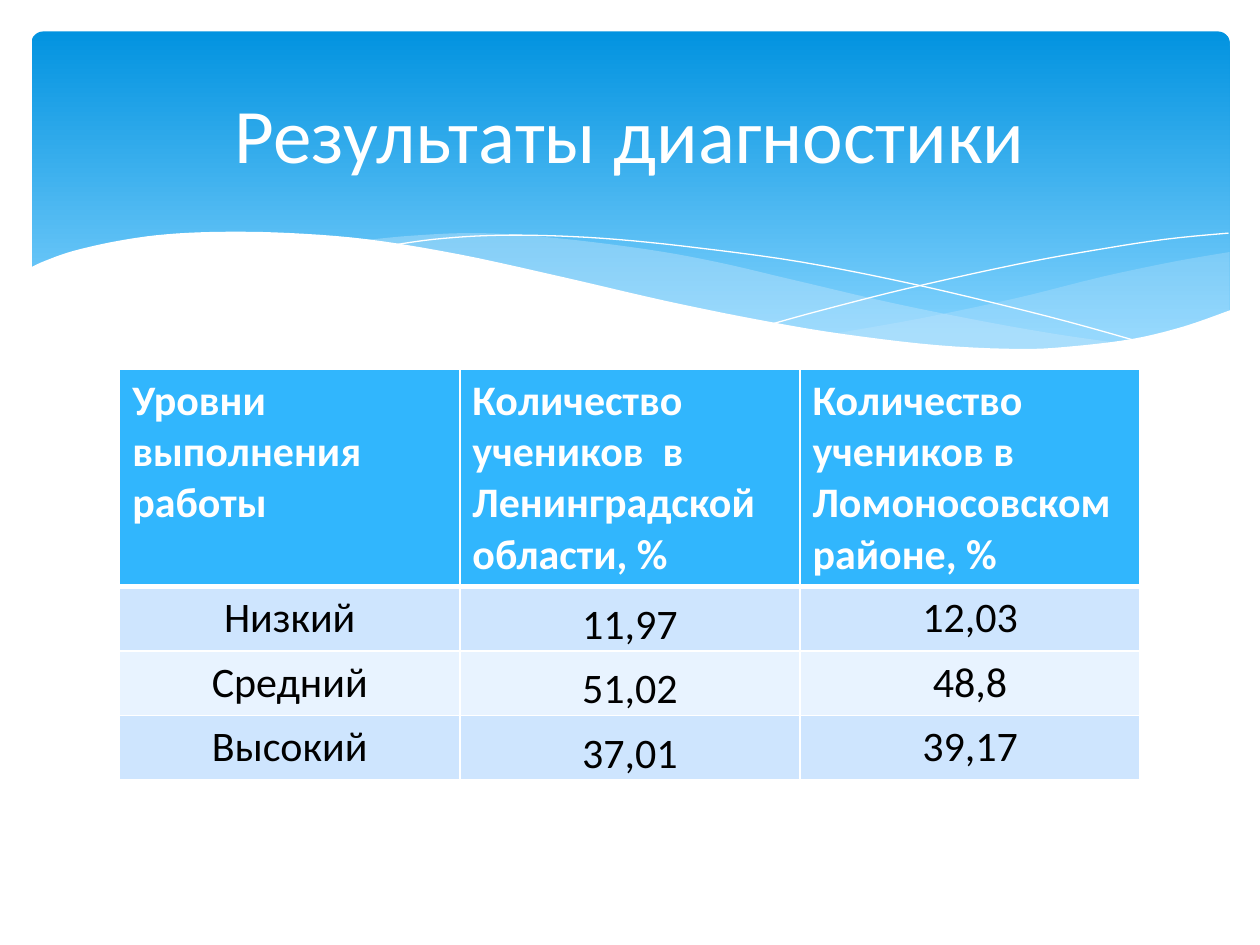
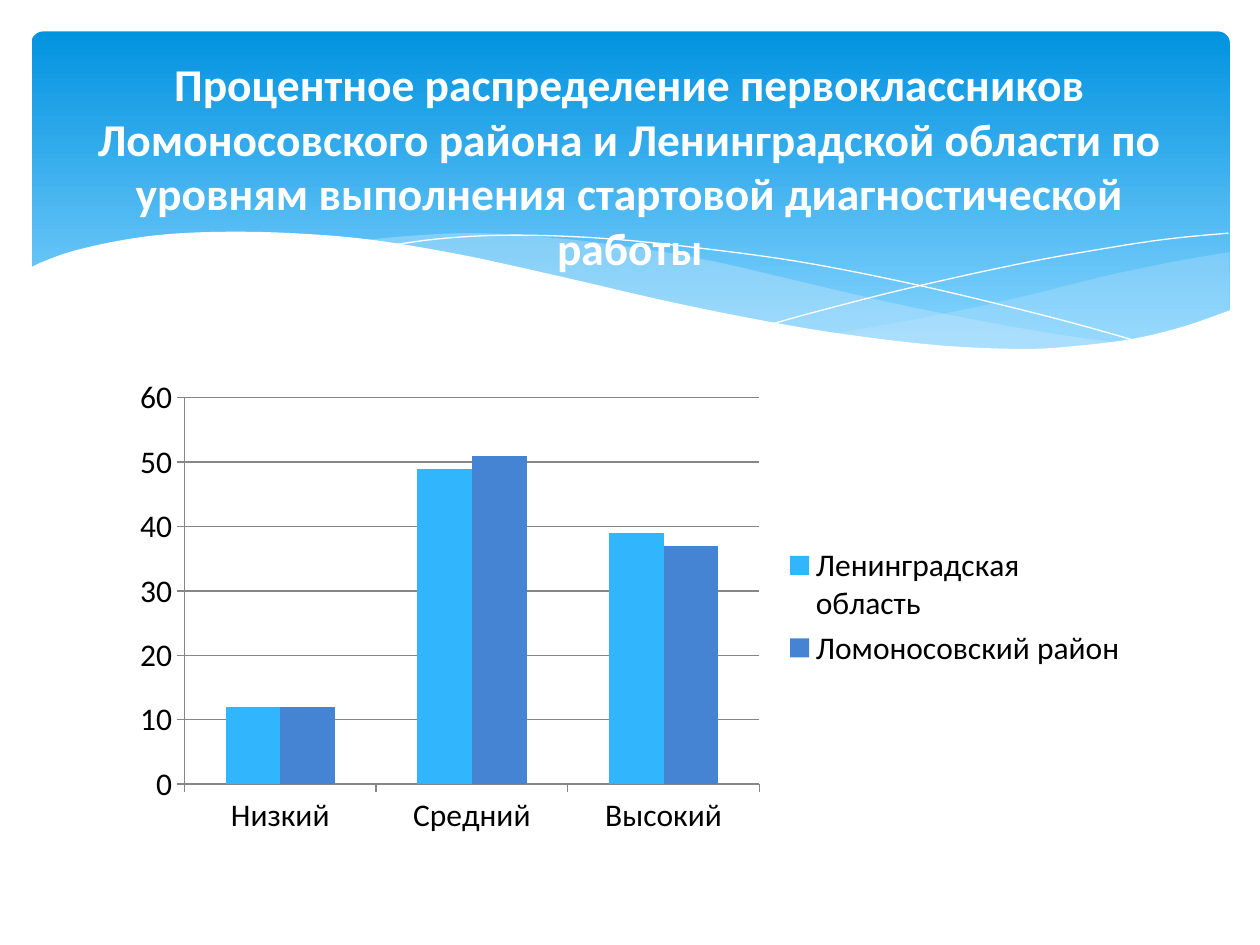
from lxml import etree
from pptx import Presentation
from pptx.chart.data import CategoryChartData
from pptx.dml.color import RGBColor
from pptx.enum.chart import XL_CHART_TYPE, XL_LEGEND_POSITION, XL_TICK_MARK
from pptx.enum.shapes import MSO_SHAPE
from pptx.enum.text import MSO_ANCHOR, PP_ALIGN
from pptx.oxml.ns import qn
from pptx.util import Inches, Pt

ROUND_RECT = MSO_SHAPE.ROUNDED_RECTANGLE
CENTER = PP_ALIGN.CENTER
MIDDLE, BOTTOM = MSO_ANCHOR.MIDDLE, MSO_ANCHOR.BOTTOM
COLUMNS = XL_CHART_TYPE.COLUMN_CLUSTERED
LEGEND_RIGHT = XL_LEGEND_POSITION.RIGHT
TICK_OUT = XL_TICK_MARK.OUTSIDE

WHITE = RGBColor(0xFF, 0xFF, 0xFF)
BLACK = RGBColor(0x00, 0x00, 0x00)
BAND_TOP = RGBColor(0x02, 0x93, 0xE0)
BAND_BOTTOM = RGBColor(0x83, 0xD3, 0xFE)
WAVE = RGBColor(0xC6, 0xE7, 0xFC)
SKY = RGBColor(0x31, 0xB6, 0xFD)
BLUE = RGBColor(0x45, 0x84, 0xD3)
ROW_DARK = RGBColor(0xCE, 0xE5, 0xFE)
ROW_LIGHT = RGBColor(0xE8, 0xF3, 0xFF)
AXIS_GRAY = RGBColor(0x86, 0x86, 0x86)
FONT = "Calibri"

BAND_BOX = (0.25, 0.25, 9.51, 2.7)
TABLE_BOX = (0.95, 2.93, 8.1, 3.25)
CHART_BOX = (0.95, 2.93, 8.1, 3.77)

RIGHT_WAVE = [
    [(9.51, 1.75), (9.1, 1.82), (8.66, 1.91), (8.36, 1.98), (7.8, 2.12),
     (7.04, 2.28), (6.36, 2.4)],
    [(6.36, 2.4), (6.8, 2.46), (7.32, 2.51), (7.78, 2.53), (8.29, 2.51),
     (8.72, 2.45), (9.1, 2.37), (9.51, 2.22)],
]
MIDDLE_WAVE = [
    [(2.61, 1.66), (3.03, 1.62), (3.55, 1.6), (4.17, 1.64), (4.89, 1.73),
     (5.44, 1.83), (6.04, 1.97), (6.81, 2.15), (7.5, 2.29), (8.12, 2.4),
     (8.68, 2.48)],
    [(8.68, 2.48), (8.23, 2.52), (7.82, 2.53), (7.23, 2.51), (6.55, 2.43),
     (5.93, 2.33), (5.05, 2.15), (4.24, 1.97), (3.58, 1.82), (2.98, 1.71),
     (2.61, 1.66)],
]
FALLING_LINE = [
    [(2.84, 1.7), (3.19, 1.65), (3.62, 1.62), (4.08, 1.62), (4.64, 1.65),
     (5.31, 1.72), (6.11, 1.83), (7.02, 2.01), (8.06, 2.26), (8.82, 2.47)],
]
RISING_LINE = [
    [(5.88, 2.32), (6.28, 2.21), (6.95, 2.04), (7.81, 1.85), (8.41, 1.74),
     (8.99, 1.65), (9.5, 1.6)],
]
WHITE_WAVE = [
    [(9.52, 2.21), (9.15, 2.34), (8.74, 2.44), (8.25, 2.5), (7.84, 2.52),
     (7.19, 2.49), (6.43, 2.4), (5.78, 2.29), (5.04, 2.14), (4.22, 1.95),
     (3.4, 1.77), (2.67, 1.65), (2.05, 1.6), (1.52, 1.59), (1.07, 1.61),
     (0.7, 1.66), (0.34, 1.74), (0.11, 1.82), (-0.02, 1.88)],
    [(-0.02, 3.04), (9.52, 3.04)],
]

LEVELS = ["Низкий", "Средний", "Высокий"]
HEADERS = [
    "Уровни выполнения работы",
    "Количество учеников  в Ленинградской области, %",
    "Количество учеников в Ломоносовском районе, %",
]
REGION_SHARES = ["11,97", "51,02", "37,01"]
DISTRICT_SHARES = ["12,03", "48,8", "39,17"]
CHART_SERIES = [
    ("Ленинградская область", (12, 49, 39), SKY),
    ("Ломоносовский район", (12, 51, 37), BLUE),
]


def smooth(points, steps=5):
    """Return a Catmull-Rom curve through the points."""
    padded = [points[0], *points, points[-1]]
    curve = [points[0]]
    for a, b, c, d in zip(padded, padded[1:], padded[2:], padded[3:]):
        for step in range(1, steps + 1):
            t = step / steps
            curve.append(tuple(
                (2 * q + (r - p) * t + (2 * p - 5 * q + 4 * r - s) * t ** 2
                 + (3 * q - p - 3 * r + s) * t ** 3) / 2
                for p, q, r, s in zip(a, b, c, d)))
    return curve


def add_curve(slide, box, curves, fill=None, alpha=100):
    """Draw a filled wave, or a hairline when no fill is given."""
    left, top = box[:2]
    points = [(Inches(left + x), Inches(top + y))
              for curve in curves for x, y in smooth(curve)]
    builder = slide.shapes.build_freeform(*points[0])
    builder.add_line_segments(points[1:], close=fill is not None)
    sp = builder.convert_to_shape()
    sp.shadow.inherit = False
    if fill is None:
        sp.fill.background()
        sp.line.color.rgb = WHITE
        sp.line.width = 0
        return
    sp.fill.solid()
    sp.fill.fore_color.rgb = fill
    sp.line.fill.background()
    if alpha < 100:
        color = sp.fill._xPr.find(".//" + qn("a:srgbClr"))
        etree.SubElement(color, qn("a:alpha"), val=str(alpha * 1000))


def add_band(slide, box):
    """Draw the gradient band with its waves."""
    sp = slide.shapes.add_shape(ROUND_RECT, *map(Inches, box))
    sp.adjustments[0] = 0.034
    sp.shadow.inherit = False
    sp.line.fill.background()
    sp.fill.gradient()
    sp.fill.gradient_angle = 270
    stops = zip(sp.fill.gradient_stops, (0, 0.9), (BAND_TOP, BAND_BOTTOM))
    for stop, position, color in stops:
        stop.position = position
        stop.color.rgb = color
    add_curve(slide, box, RIGHT_WAVE, WAVE, 29)
    add_curve(slide, box, MIDDLE_WAVE, WAVE, 40)
    add_curve(slide, box, FALLING_LINE)
    add_curve(slide, box, RISING_LINE)
    add_curve(slide, box, WHITE_WAVE, WHITE)


def format_text(p, size, color, bold=False):
    """Format every run of a paragraph."""
    for r in p.runs:
        r.font.name = FONT
        r.font.size = Pt(size)
        r.font.bold = bold
        r.font.color.rgb = color


def add_title(slide, box, text, size, bold=False):
    """Write the centred white title."""
    tf = slide.shapes.add_textbox(*map(Inches, box)).text_frame
    tf.word_wrap = True
    tf.vertical_anchor = MIDDLE
    tf.text = text
    p = tf.paragraphs[0]
    p.alignment = CENTER
    format_text(p, size, WHITE, bold)


def set_borders(cell, top, bottom):
    """Give a cell white borders, with top and bottom widths in points."""
    tc_pr = cell._tc.get_or_add_tcPr()
    sides = (("L", 1), ("R", 1), ("T", top), ("B", bottom))
    for i, (side, width) in enumerate(sides):
        ln = etree.Element(qn("a:ln" + side), w=str(Pt(width)))
        solid = etree.SubElement(ln, qn("a:solidFill"))
        etree.SubElement(solid, qn("a:srgbClr"), val=str(WHITE))
        tc_pr.insert(i, ln)


def add_results_table(slide, box):
    """Fill the table of results by level."""
    rows = [HEADERS, *zip(LEVELS, REGION_SHARES, DISTRICT_SHARES)]
    table = slide.shapes.add_table(
        len(rows), len(HEADERS), *map(Inches, box)).table
    table.horz_banding = False
    for column in table.columns:
        column.width = Inches(box[2] / len(HEADERS))
    header_height = 1.72
    for i, values in enumerate(rows):
        header = i == 0
        body_height = (box[3] - header_height) / len(LEVELS)
        table.rows[i].height = Inches(header_height if header else body_height)
        for j, value in enumerate(values):
            cell = table.cell(i, j)
            cell.text = value
            p = cell.text_frame.paragraphs[0]
            format_text(p, 24, WHITE if header else BLACK, header)
            cell.fill.solid()
            cell.fill.fore_color.rgb = (
                SKY if header else ROW_DARK if i % 2 else ROW_LIGHT)
            set_borders(cell, 3 if i == 1 else 1, 3 if header else 1)
            if not header:
                p.alignment = CENTER
                if j == 1:
                    p.line_spacing = 1.15
                    cell.vertical_anchor = BOTTOM
                    cell.margin_left = cell.margin_right = Inches(0.07)
                    cell.margin_top = cell.margin_bottom = 0


def add_levels_chart(slide, box):
    """Draw the column chart that compares region and district."""
    data = CategoryChartData()
    data.categories = LEVELS
    for name, values, _ in CHART_SERIES:
        data.add_series(name, values)
    chart = slide.shapes.add_chart(COLUMNS, *map(Inches, box), data).chart
    chart.has_title = False
    chart.font.name = FONT
    chart.font.size = Pt(18)
    chart.font.color.rgb = BLACK
    chart.has_legend = True
    chart.legend.position = LEGEND_RIGHT
    chart.legend.include_in_layout = False
    plot = chart.plots[0]
    plot.gap_width = 150
    plot.vary_by_categories = False
    for series, (_, _, color) in zip(plot.series, CHART_SERIES):
        series.format.fill.solid()
        series.format.fill.fore_color.rgb = color
    for axis in (chart.category_axis, chart.value_axis):
        axis.major_tick_mark = TICK_OUT
        axis.format.line.color.rgb = AXIS_GRAY
    chart.value_axis.has_major_gridlines = True
    chart.value_axis.major_gridlines.format.line.color.rgb = AXIS_GRAY


def new_slide(prs):
    """Add a blank slide with the shared band."""
    slide = prs.slides.add_slide(prs.slide_layouts[6])
    add_band(slide, BAND_BOX)
    return slide


def build_table_slide(prs):
    """Build the slide with the results table."""
    slide = new_slide(prs)
    add_results_table(slide, TABLE_BOX)
    add_title(slide, (0.5, 0.37, 9, 1.37), "Результаты диагностики", 44)


def build_chart_slide(prs):
    """Build the slide with the chart of levels."""
    slide = new_slide(prs)
    add_title(
        slide, (0.5, 0.37, 9, 1.88),
        "Процентное распределение первоклассников Ломоносовского района "
        "и Ленинградской области по уровням выполнения стартовой "
        "диагностической работы", 26, True)
    add_levels_chart(slide, CHART_BOX)


def main():
    """Build and save the presentation."""
    prs = Presentation()
    prs.slide_width, prs.slide_height = Inches(10), Inches(7.5)
    build_table_slide(prs)
    build_chart_slide(prs)
    prs.save("out.pptx")


if __name__ == "__main__":
    main()
